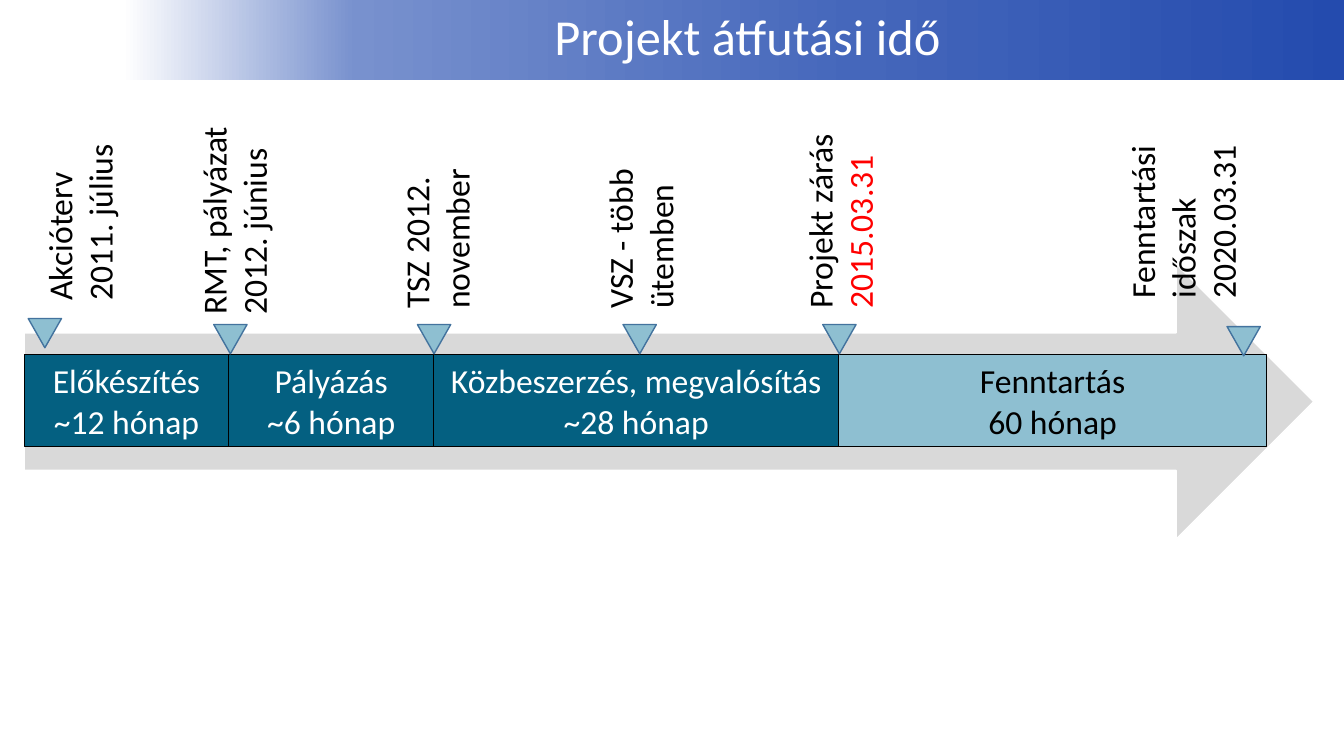
import copy

import pptx
import pptx.dml.color
import pptx.enum.shapes
import pptx.enum.text
import pptx.util

Inches = pptx.util.Inches
Pt = pptx.util.Pt
RGBColor = pptx.dml.color.RGBColor
Shape = pptx.enum.shapes.MSO_SHAPE
Align = pptx.enum.text.PP_ALIGN
AutoSize = pptx.enum.text.MSO_AUTO_SIZE

FONT = "Calibri"
WHITE = RGBColor(0xFF, 0xFF, 0xFF)
BLACK = RGBColor(0, 0, 0)
RED = RGBColor(0xFF, 0, 0)
GREY = RGBColor(0xD9, 0xD9, 0xD9)
TEAL = RGBColor(0x04, 0x60, 0x81)
PALE_TEAL = RGBColor(0x8E, 0xBF, 0xD1)
MARKER_EDGE = RGBColor(0x43, 0x73, 0x9E)
BANNER_STOPS = [
    (0, WHITE),
    (0.19, RGBColor(0x78, 0x91, 0xCE)),
    (0.6, RGBColor(0x45, 0x67, 0xBB)),
    (1, RGBColor(0x24, 0x4B, 0xAE)),
]

# Phase: width, fill, font colour, text
PHASES = [
    (2.03, TEAL, WHITE, "Előkészítés\n~12 hónap"),
    (2.03, TEAL, WHITE, "Pályázás\n~6 hónap"),
    (4.02, TEAL, WHITE, "Közbeszerzés, megvalósítás\n~28 hónap"),
    (4.24, PALE_TEAL, BLACK, "Fenntartás\n60 hónap"),
]

# Milestone: marker left and top, label centre, bottom, length and depth, text, red ending
MILESTONES = [
    (0.28, 3.16, 0.79, 3.08, 1.95, 0.91, "Akcióterv\n2011. július", ""),
    (2.12, 3.22, 2.32, 3.22, 2.09, 0.91, "RMT, pályázat\n2012. június", ""),
    (4.14, 3.22, 4.33, 3.16, 2.03, 0.91, "TSZ 2012. november", ""),
    (6.18, 3.22, 6.35, 3.16, 1.83, 0.91, "VSZ - több ütemben", ""),
    (8.16, 3.22, 8.33, 3.16, 2.03, 0.91, "Projekt zárás ", "2015.03.31"),
    (12.17, 3.24, 11.73, 3.06, 2, 1.31, "Fenntartási időszak\n2020.03.31", ""),
]


def add_box(slide, kind, left, top, width, height, fill=None, edge=None, edge_width=1):
    box = slide.shapes.add_shape(
        kind, Inches(left), Inches(top), Inches(width), Inches(height))
    box.shadow.inherit = False
    if fill is not None:
        box.fill.solid()
        box.fill.fore_color.rgb = fill
    if edge is None:
        box.line.fill.background()
    else:
        box.line.color.rgb = edge
        box.line.width = Pt(edge_width)
    return box


def write_text(box, text, size, color, align):
    frame = box.text_frame
    frame.text = text
    frame.word_wrap = True
    for para in frame.paragraphs:
        para.alignment = align
        for span in para.runs:
            span.font.name = FONT
            span.font.size = Pt(size)
            span.font.color.rgb = color


def add_banner(slide, left, top, width, height):
    # Gradient band behind the title
    band = add_box(slide, Shape.RECTANGLE, left, top, width, height)
    band.fill.gradient()
    band.fill.gradient_angle = 0
    stop_list = band.element.spPr.find(".//" + pptx.oxml.ns.qn("a:gsLst"))
    while len(stop_list) < len(BANNER_STOPS):
        stop_list.append(copy.deepcopy(stop_list[0]))
    for stop, (position, color) in zip(band.fill.gradient_stops, BANNER_STOPS):
        stop.position = position
        stop.color.rgb = color

    # Title
    title = slide.shapes.title
    title.element.addprevious(band.element)
    title.left, title.top = Inches(left + 0.28), Inches(top)
    title.width, title.height = Inches(width - 0.28), Inches(height - 0.02)
    write_text(title, "Projekt átfutási idő", 36, WHITE, Align.CENTER)
    title.text_frame.auto_size = AutoSize.NONE
    title.text_frame.vertical_anchor = pptx.enum.text.MSO_ANCHOR.MIDDLE
    title.text_frame.paragraphs[0].line_spacing = 0.9


def add_timeline(slide, left, top, width, height):
    # Background arrow
    add_box(slide, Shape.RIGHT_ARROW, left, top, width, height, GREY, WHITE)

    # Phases side by side
    phase_left = left
    for phase_width, fill, color, text in PHASES:
        phase = add_box(slide, Shape.RECTANGLE, phase_left, top + 0.9,
                        phase_width, 0.91, fill, BLACK, 0.75)
        write_text(phase, text, 24, color, Align.CENTER)
        phase.text_frame.auto_size = AutoSize.SHAPE_TO_FIT_TEXT
        phase_left += phase_width


def add_milestone(slide, marker_left, marker_top, center, bottom, length, depth,
                  text, red_ending):
    # Marker pointing down
    marker = add_box(slide, Shape.ISOSCELES_TRIANGLE, marker_left, marker_top,
                     0.33, 0.29, PALE_TEAL, MARKER_EDGE)
    marker.rotation = 180

    # Label reading upwards
    label = slide.shapes.add_textbox(
        Inches(center - length / 2), Inches(bottom - (length + depth) / 2),
        Inches(length), Inches(depth))
    label.rotation = 270
    write_text(label, text, 24, BLACK, Align.LEFT)
    label.text_frame.auto_size = AutoSize.SHAPE_TO_FIT_TEXT
    if red_ending:
        span = label.text_frame.paragraphs[0].add_run()
        span.text = red_ending
        span.font.name = FONT
        span.font.size = Pt(24)
        span.font.color.rgb = RED


def main():
    deck = pptx.Presentation()
    deck.slide_width = Inches(13.33)
    deck.slide_height = Inches(7.5)
    slide = deck.slides.add_slide(deck.slide_layouts.get_by_name("Title Only"))
    add_banner(slide, 1.22, 0, 12.11, 0.79)
    add_timeline(slide, 0.24, 2.62, 12.79, 2.73)
    for milestone in MILESTONES:
        add_milestone(slide, *milestone)
    deck.save("out.pptx")


if __name__ == "__main__":
    main()
